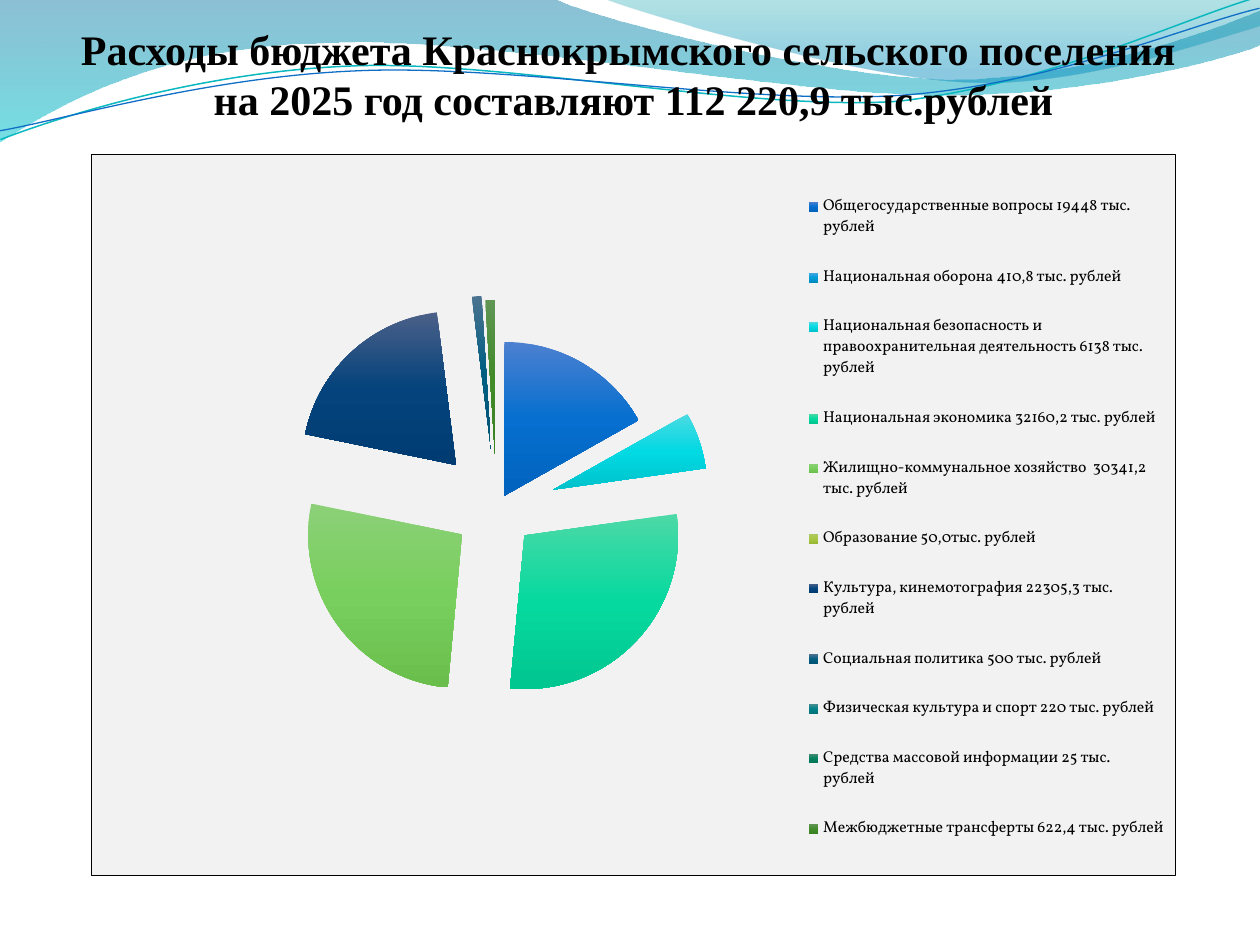
from dataclasses import dataclass

from lxml import etree
from pptx import Presentation
from pptx import util as u
from pptx.chart.data import CategoryChartData
from pptx.dml.color import RGBColor
from pptx.enum import chart as ch
from pptx.enum import text
from pptx.oxml import parse_xml
from pptx.oxml.ns import nsdecls, qn

PX = 914400 / 126


@dataclass
class Theme:
    ink: str = "000000"
    panel: str = "F2F2F2"
    teal: str = "0AB8BF"
    blue: str = "0F6FC6"
    title_font: str = "Times New Roman"
    chart_font: str = "Vollkorn"
    title_size: int = 24
    chart_size: int = 10
    legend_size: int = 9
    wave_back: tuple = ((0, "0074A1", 45), (100, "00C6CF", 55))
    wave_front: tuple = ((0, "00A1A9", 30), (80, "008BBF", 45))
    slices: tuple = (
        ("4C80D0", "066FCF", "0063BD"),
        ("4BA8E0", "009DD9", "008CC1"),
        ("4BDAE2", "01D9E3", "00C2CB"),
        ("4CD9A7", "06D99F", "00C690"),
        ("8BD077", "79CF5D", "69BE4C"),
        ("AFC964", "A8C843", "99B935"),
        ("4B6088", "04437C", "003C72"),
        ("4B7390", "005E82", "005474"),
        ("4B8D92", "008288", "00747A"),
        ("4B8D73", "048260", "007757"),
        ("609554", "418B29", "388020"),
    )


def px(n):
    return u.Emu(round(n * PX))


def rgb(value):
    return RGBColor.from_string(value)


def set_gradient(fill, stops):
    fill.gradient()
    grad = fill._xPr.find(qn("a:gradFill"))
    stop_list = grad.find(qn("a:gsLst"))
    for old in list(stop_list):
        stop_list.remove(old)
    for pos, color, alpha in stops:
        gs = etree.SubElement(stop_list, qn("a:gs"), pos=str(pos * 1000))
        clr = etree.SubElement(gs, qn("a:srgbClr"), val=color)
        if alpha < 100:
            etree.SubElement(clr, qn("a:alpha"), val=str(alpha * 1000))
    grad.find(qn("a:lin")).set("ang", "5400000")


def set_layout(parent, index, box, size, inner=False):
    for old in parent.findall(qn("c:layout")):
        parent.remove(old)
    target = '<c:layoutTarget val="inner"/>' if inner else ""
    modes = '<c:xMode val="edge"/><c:yMode val="edge"/>'
    sizes = "".join(f'<c:{k} val="{v / full}"/>' for k, v, full in zip("xywh", box, size * 2))
    parent.insert(index, parse_xml(
        f'<c:layout {nsdecls("c")}><c:manualLayout>{target}{modes}{sizes}'
        "</c:manualLayout></c:layout>"))


def explosion(value):
    return parse_xml(f'<c:explosion {nsdecls("c")} val="{value}"/>')


class Deck:
    def __init__(self, theme):
        self.theme = theme
        self.prs = Presentation()
        self.prs.slide_width, self.prs.slide_height = px(1260), px(945)
        self.s = self.prs.slides.add_slide(self.prs.slide_layouts[6])

    def outline(self, start, parts, closed):
        builder = self.s.shapes.build_freeform(*start, scale=PX)
        builder.add_line_segments([pt for part in parts for pt in part], close=closed)
        sp = builder.convert_to_shape()
        sp.shadow.inherit = False
        segments = iter(list(sp._element.iter(qn("a:lnTo"))))
        for part in parts:
            group = [next(segments) for _ in part]
            if len(group) == 3:
                bezier = etree.Element(qn("a:cubicBezTo"))
                group[0].addprevious(bezier)
                for segment in group:
                    bezier.append(segment[0])
                    segment.getparent().remove(segment)
        return sp

    def wave(self, start, parts, stops):
        sp = self.outline(start, parts, True)
        set_gradient(sp.fill, stops)
        sp.line.fill.background()

    def curve(self, start, parts, color, width):
        sp = self.outline(start, parts, False)
        sp.rotation = 357.3
        sp.fill.background()
        sp.line.color.rgb = rgb(color)
        sp.line.width = u.Pt(width)

    def title(self, x, y, w, h, lines):
        tf = self.s.shapes.add_textbox(px(x), px(y), px(w), px(h)).text_frame
        tf.word_wrap = True
        tf.vertical_anchor = text.MSO_ANCHOR.MIDDLE
        for i, line in enumerate(lines):
            p = tf.add_paragraph() if i else tf.paragraphs[0]
            p.text = line
            p.alignment = text.PP_ALIGN.CENTER
            self.style(p.font, self.theme.title_font, self.theme.title_size)
            p.font.bold = True

    def style(self, font, name, size):
        font.name, font.size = name, u.Pt(size)
        font.color.rgb = rgb(self.theme.ink)

    def pie(self, x, y, w, h, series, rows, offset, offsets, plot_box, legend_box):
        data = CategoryChartData(number_format="0")
        data.categories = [label for label, _ in rows]
        data.add_series(series, [share for _, share in rows])
        chart = self.s.shapes.add_chart(
            ch.XL_CHART_TYPE.PIE, px(x), px(y), px(w), px(h), data).chart
        t = self.theme
        chart.has_title = False
        self.style(chart.font, t.chart_font, t.chart_size)
        chart.has_legend = True
        legend = chart.legend
        legend.position = ch.XL_LEGEND_POSITION.BOTTOM
        legend.include_in_layout = False
        self.style(legend.font, t.chart_font, t.legend_size)
        set_layout(legend._element, 1, legend_box, (w, h))

        plot = chart.plots[0]
        plot.vary_by_categories = True
        ser = plot.series[0]
        for i, colors in enumerate(t.slices):
            fill = ser.points[i].format.fill
            set_gradient(fill, [(pos, c, 100) for pos, c in zip((0, 50, 100), colors)])
            if i in offsets:
                fill._xPr.addprevious(explosion(offsets[i]))
        ser._element.find(qn("c:dPt")).addprevious(explosion(offset))

        space = chart._chartSpace
        set_layout(space.chart.plotArea, 0, plot_box, (w, h), inner=True)
        space.find(qn("c:txPr")).addprevious(parse_xml(
            f'<c:spPr {nsdecls("c", "a")}>'
            f'<a:solidFill><a:srgbClr val="{t.panel}"/></a:solidFill>'
            f'<a:ln w="{u.Pt(0.75)}"><a:solidFill><a:srgbClr val="{t.ink}"/>'
            "</a:solidFill></a:ln></c:spPr>"))


EXPENSES = [
    ("Общегосударственные вопросы 19448 тыс. рублей", 17),
    ("Национальная оборона 410,8 тыс. рублей", 0),
    ("Национальная безопасность и правоохранительная деятельность 6138 тыс. рублей", 6),
    ("Национальная экономика 32160,2 тыс. рублей", 29),
    ("Жилищно-коммунальное хозяйство  30341,2 тыс. рублей", 27),
    ("Образование 50,0тыс. рублей", 0),
    ("Культура, кинемотография 22305,3 тыс. рублей", 20),
    ("Социальная политика 500 тыс. рублей", 1),
    ("Физическая культура и спорт 220 тыс. рублей", 0),
    ("Средства массовой информации 25 тыс. рублей", 0),
    ("Межбюджетные трансферты 622,4 тыс. рублей", 1),
]


def main():
    theme = Theme()
    deck = Deck(theme)
    deck.wave((0, 0), [
        [(554, -1)],
        [(600, 21), (837, 79), (955, 79)],
        [(1075, 79), (1207, 33), (1260, 11)],
        [(1261, 45)],
        [(1239, 55), (1096, 96), (940, 95)],
        [(784, 95), (481, 35), (324, 43)],
        [(163, 45), (58, 105), (-1, 142)],
    ], theme.wave_back)
    deck.wave((604, -1), [
        [(641, 14), (859, 78), (969, 82)],
        [(1079, 87), (1211, 40), (1260, 26)],
        [(1260, 0)],
    ], theme.wave_front)
    deck.curve((-2, 110), [
        [(58, 90), (199, 52), (350, 53)],
        [(499, 53), (745, 117), (896, 114)],
        [(1049, 104), (1184, 45), (1260, 27)],
    ], theme.teal, 0.85)
    deck.curve((-2, 101), [
        [(57, 94), (207, 57), (357, 58)],
        [(509, 58), (750, 112), (902, 108)],
        [(1052, 104), (1188, 52), (1262, 38)],
    ], theme.blue, 0.75)
    deck.title(33, 16, 1201, 115, [
        "Расходы бюджета Краснокрымского сельского поселения ",
        "на 2025 год составляют 112 220,9 тыс.рублей",
    ])
    deck.pie(91, 154, 1085, 722, "Series 1", EXPENSES, 39,
             {0: 10, 3: 25, 4: 28, 10: 36},
             (1, 141, 809, 428), (718, 13, 355, 702))
    deck.prs.save("out.pptx")


if __name__ == "__main__":
    main()
